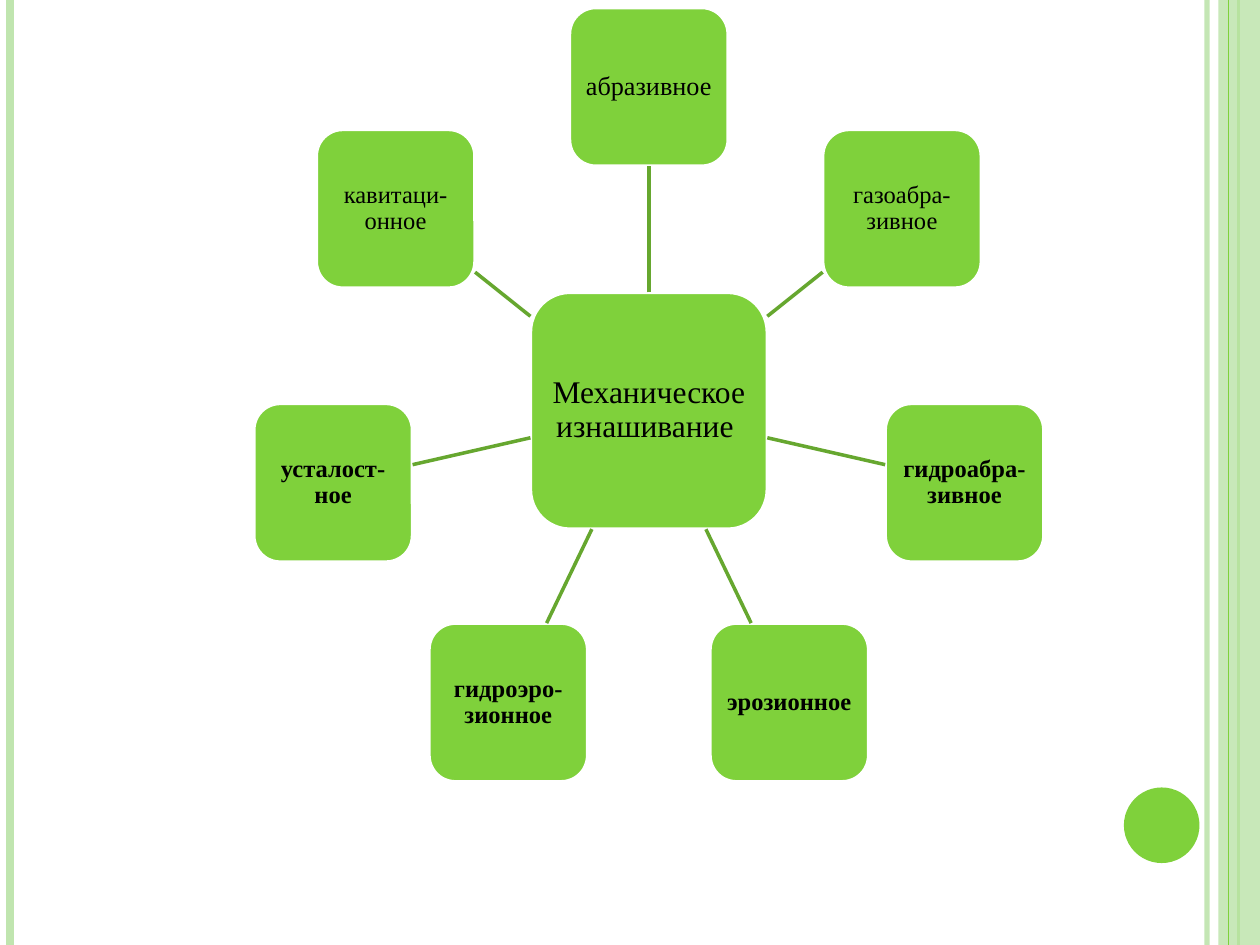
import math

import lxml.etree
import pptx
import pptx.dml.color
import pptx.enum.shapes
import pptx.enum.text
import pptx.oxml.ns
import pptx.util

GREEN = pptx.dml.color.RGBColor(0x7F, 0xD1, 0x3B)
DARK_GREEN = pptx.dml.color.RGBColor(0x66, 0xA7, 0x2F)
PALE_GREEN = pptx.dml.color.RGBColor(0xC0, 0xE5, 0xAF)
WHITE = pptx.dml.color.RGBColor(0xFF, 0xFF, 0xFF)
BLACK = pptx.dml.color.RGBColor(0, 0, 0)
SHAPES = pptx.enum.shapes.MSO_SHAPE
qn = pptx.oxml.ns.qn
Inches = pptx.util.Inches

deck = pptx.Presentation()
deck.slide_width, deck.slide_height = Inches(10), Inches(7.5)
page = deck.slides.add_slide(deck.slide_layouts[6])


def add_line(x1, y1, x2, y2, color, width):
    line = page.shapes.add_connector(
        pptx.enum.shapes.MSO_CONNECTOR.STRAIGHT,
        Inches(x1), Inches(y1), Inches(x2), Inches(y2))
    line.line.color.rgb = color
    line.line.width = pptx.util.Pt(width)
    lxml.etree.SubElement(line._element.spPr, qn("a:effectLst"))
    return line


def add_block(kind, x, y, width, height, color):
    """Add a filled shape without outline or shadow, centred on x, y."""
    block = page.shapes.add_shape(
        kind, Inches(x - width / 2), Inches(y - height / 2),
        Inches(width), Inches(height))
    block.shadow.inherit = False
    block.fill.solid()
    block.fill.fore_color.rgb = color
    block.line.fill.background()
    return block


# Page edges: vertical stripes, a translucent band and a dot
edge_lines = [
    add_line(x, 0, x, 7.5, color, width)
    for x, color, width in [(9.58, PALE_GREEN, 3), (0.08, PALE_GREEN, 4.5),
                            (9.83, GREEN, 1.5)]]
band = add_block(SHAPES.RECTANGLE, 9.835, 3.75, 0.33, 7.5, PALE_GREEN)
add_line(9.75, 0, 9.75, 7.5, GREEN, 0.75)
add_block(SHAPES.OVAL, 9.22, 6.55, 0.6, 0.6, GREEN)

for item, opacity in [(edge_lines[0], 93), (band, 87)]:
    color_element = next(item._element.spPr.iter(qn("a:srgbClr")))
    lxml.etree.SubElement(color_element, qn("a:alpha"), val=str(opacity * 1000))

# Hub and ring of nodes, clockwise from the top
HUB_X, HUB_Y, RADIUS = 5.15, 3.26, 2.57
HUB_SIZE, NODE_SIZE = 1.88, 1.26
NODES = [
    ("абразивное", 15, False),
    ("газоабра-зивное", 14, False),
    ("гидроабра-зивное", 14, True),
    ("эрозионное", 14, True),
    ("гидроэро-зионное", 14, True),
    ("усталост-ное", 14, True),
    ("кавитаци-онное", 14, False),
]
labels = [("Механическое изнашивание ", 18, False, HUB_X, HUB_Y, HUB_SIZE, 0.05)]
directions = []
for index, (text, size, bold) in enumerate(NODES):
    angle = 2 * math.pi * index / len(NODES)
    across, down = math.sin(angle), -math.cos(angle)
    directions.append((across, down))
    labels.append((text, size, bold, HUB_X + RADIUS * across,
                   HUB_Y + RADIUS * down, NODE_SIZE, 0.04))

boxes = []
for text, size, bold, x, y, side, inset in labels:
    box = add_block(SHAPES.ROUNDED_RECTANGLE, x, y, side, side, GREEN)
    box.line.color.rgb = WHITE
    box.line.width = pptx.util.Pt(2)
    frame = box.text_frame
    frame.word_wrap = True
    frame.vertical_anchor = pptx.enum.text.MSO_ANCHOR.MIDDLE
    frame.margin_left = frame.margin_right = Inches(inset)
    frame.margin_top = frame.margin_bottom = Inches(inset)
    para = frame.paragraphs[0]
    para.alignment = pptx.enum.text.PP_ALIGN.CENTER
    para.line_spacing = 0.9
    span = para.add_run()
    span.text = text
    span.font.name = "Times New Roman"
    span.font.size = pptx.util.Pt(size)
    span.font.bold = bold
    span.font.color.rgb = BLACK
    boxes.append(box)

# Each spoke runs along its ray from the hub's edge to the node's edge
spokes = []
for across, down in directions:
    reach = max(abs(across), abs(down))
    start = HUB_SIZE / 2 / reach
    end = RADIUS - NODE_SIZE / 2 / reach
    spokes.append(add_line(HUB_X + start * across, HUB_Y + start * down,
                           HUB_X + end * across, HUB_Y + end * down,
                           DARK_GREEN, 2))
spokes[0].begin_connect(boxes[0], 0)
spokes[0].end_connect(boxes[1], 2)

deck.save("out.pptx")
